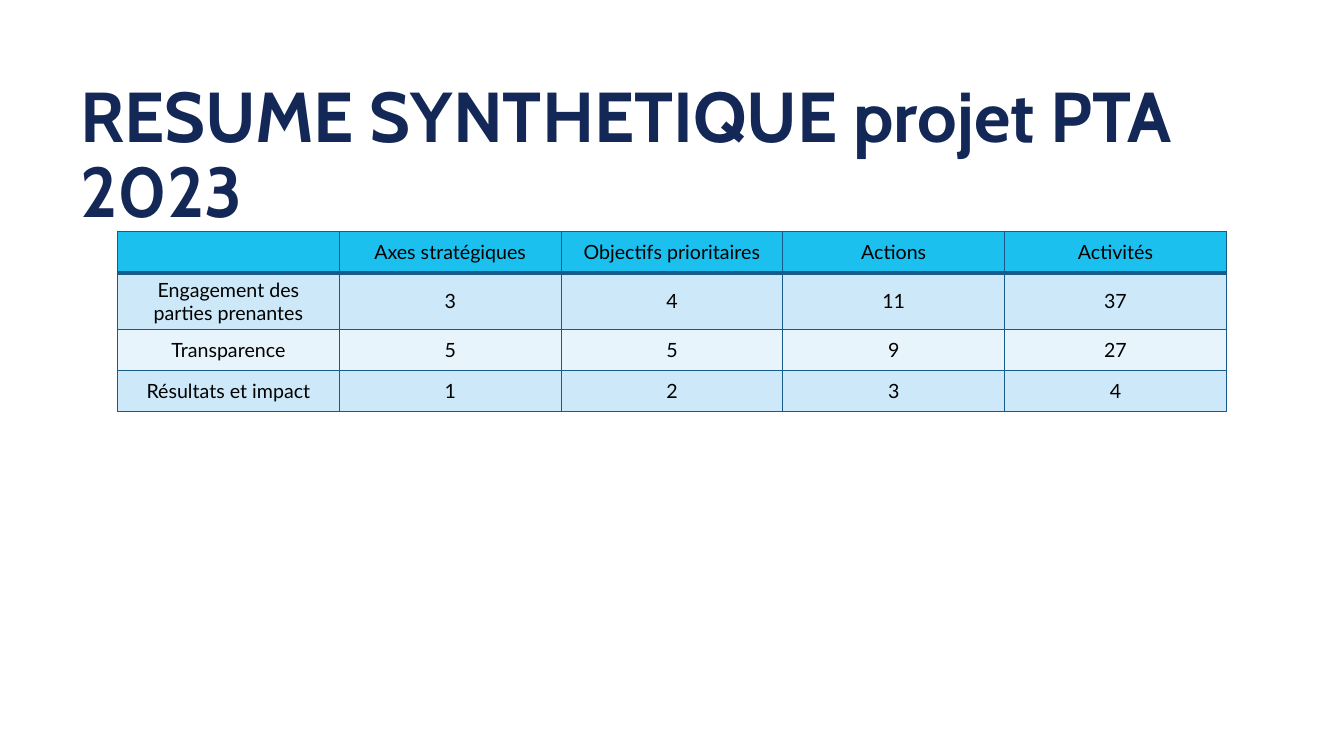
from dataclasses import dataclass

from lxml import etree
from pptx import Presentation
from pptx.dml.color import RGBColor
from pptx.enum.text import MSO_ANCHOR, PP_ALIGN
from pptx.oxml.ns import qn
from pptx.util import Pt

LEFT, CENTER = PP_ALIGN.LEFT, PP_ALIGN.CENTER
MIDDLE = MSO_ANCHOR.MIDDLE


@dataclass(frozen=True)
class Theme:
    title_font: str = "Cabin"
    body_font: str = "Lato"
    title_size: float = 50.4
    body_size: float = 14
    title_color: str = "132856"
    body_color: str = "000100"
    header_fill: str = "1CC0EE"
    band_fills: tuple = ("CDE8F8", "E8F4FC")
    border: str = "165B89"
    thin: float = 1
    thick: float = 3


def write(tf, text, *, font, size, color, bold=False, align=LEFT, spacing=None):
    p = tf.paragraphs[0]
    p.alignment = align
    if spacing:
        p.line_spacing = spacing
    if text:
        r = p.add_run()
        r.text = text
        r.font.name = font
        r.font.size = Pt(size)
        r.font.bold = bold
        r.font.color.rgb = RGBColor.from_string(color)


def set_border(cell, side, color, width):
    ln = etree.SubElement(cell._tc.get_or_add_tcPr(), qn(f"a:ln{side}"), w=str(Pt(width)))
    fill = etree.SubElement(ln, qn("a:solidFill"))
    etree.SubElement(fill, qn("a:srgbClr"), val=color)


class SlideBuilder:
    def __init__(self, slide, theme):
        self.s = slide
        self.theme = theme

    def title(self, text, left, top, width, height):
        t = self.theme
        sp = self.s.shapes.add_textbox(Pt(left), Pt(top), Pt(width), Pt(height))
        tf = sp.text_frame
        tf.word_wrap = True
        tf.vertical_anchor = MIDDLE
        write(tf, text, font=t.title_font, size=t.title_size,
              color=t.title_color, bold=True, spacing=0.89)

    def table(self, rows, left, top, col_width, row_height):
        n_rows, n_cols = len(rows), len(rows[0])
        table = self.s.shapes.add_table(
            n_rows, n_cols, Pt(left), Pt(top),
            Pt(col_width * n_cols), Pt(row_height * n_rows)).table
        for i, values in enumerate(rows):
            table.rows[i].height = Pt(row_height)
            for j, value in enumerate(values):
                self.cell(table.cell(i, j), value, i)

    def cell(self, cell, value, row):
        t = self.theme
        thick_side = {0: "B", 1: "T"}.get(row)
        for side in "LRTB":
            set_border(cell, side, t.border, t.thick if side == thick_side else t.thin)
        cell.fill.solid()
        color = t.band_fills[(row - 1) % 2] if row else t.header_fill
        cell.fill.fore_color.rgb = RGBColor.from_string(color)
        cell.vertical_anchor = MIDDLE
        write(cell.text_frame, str(value), font=t.body_font, size=t.body_size,
              color=t.body_color, align=CENTER)


SUMMARY = [
    ("", "Axes stratégiques", "Objectifs prioritaires", "Actions", "Activités"),
    ("Engagement des parties prenantes", 3, 4, 11, 37),
    ("Transparence", 5, 5, 9, 27),
    ("Résultats et impact", 1, 2, 3, 4),
]


def main():
    prs = Presentation()
    prs.slide_width, prs.slide_height = Pt(960), Pt(540)
    s = prs.slides.add_slide(prs.slide_layouts[6])
    builder = SlideBuilder(s, Theme())
    builder.title("RESUME SYNTHETIQUE projet PTA 2023", 50.4, 54, 856.8, 116.6)
    builder.table(SUMMARY, left=84, top=165.6, col_width=158.4, row_height=29.2)
    prs.save("out.pptx")


if __name__ == "__main__":
    main()
